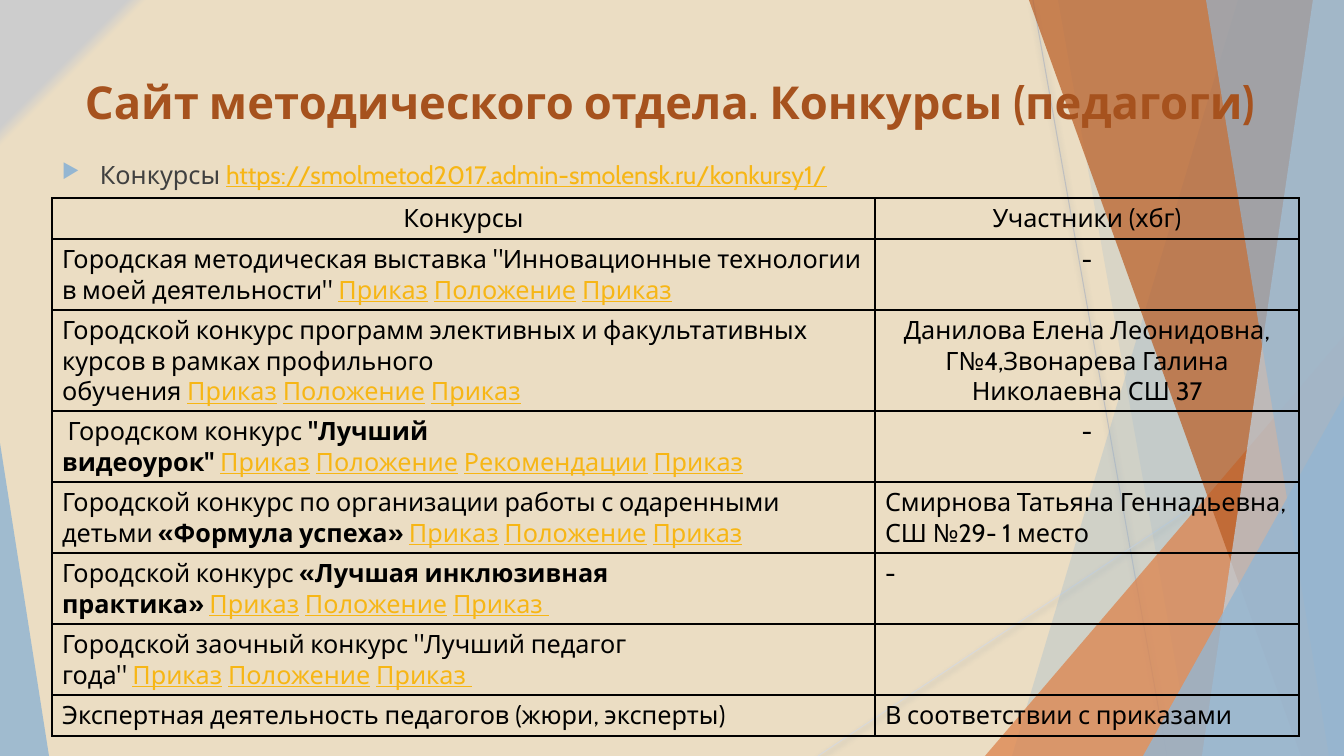
from lxml.etree import SubElement
from pptx import Presentation
from pptx.dml.color import RGBColor
from pptx.enum.shapes import MSO_CONNECTOR as Connector, MSO_SHAPE as Shape
from pptx.enum.text import MSO_ANCHOR as Anchor, PP_ALIGN as Align
from pptx.oxml.ns import qn
from pptx.util import Pt

SLIDE_WIDTH, SLIDE_HEIGHT = 1344, 756
EMU_PER_PX = 12192000 / SLIDE_WIDTH
FONT = "Cabin"
BLACK, LINK, BLUE, ORANGE = "000000", "F7B615", "94B6D2", "DD8047"
NBSP = chr(160)

# Slanted bands: top left, top right, bottom right, bottom left x; colour; opacity
BANDS_BELOW = [
    (1238, 1344, 1344, 1012, BLUE, 30),
    (1058, 1344, 1344, 1192, BLUE, 20),
]
BANDS_ABOVE = [
    (1029, 1344, 1344, 1301, "B95B22", 70),
    (1313, 1344, 1344, 1202, "BFD3E4", 70),
    (1206, 1344, 1344, 1329, BLUE, 65),
]

# Contests: lines of text, (text, bold) parts, links, participants, alignment
ORDER, RULES, ADVICE = "Приказ", "Положение", "Рекомендации"
LINKS = [ORDER, RULES, ORDER]
SPACED_LINKS = [ORDER, RULES, ORDER + NBSP]
CONTESTS = [
    (1, [("Конкурсы", False)], [], "Участники (хбг)", Align.CENTER),
    (2, [("Городская методическая выставка", False),
         ('"Инновационные технологии в моей деятельности"', False)],
     LINKS, "-", Align.CENTER),
    (3, [("Городской конкурс программ элективных и факультативных курсов "
          "в рамках профильного обучения", False)], LINKS,
     "Данилова Елена Леонидовна, Г№4,Звонарева Галина Николаевна СШ 37",
     Align.CENTER),
    (2, [("", False), ("Городском конкурс", False), ('"Лучший видеоурок"', True)],
     [ORDER, RULES, ADVICE, ORDER], "-", Align.CENTER),
    (2, [("Городской конкурс по организации работы с одаренными детьми", False),
         ("«Формула успеха»", True)], LINKS,
     "Смирнова Татьяна Геннадьевна, СШ №29- 1 место", Align.LEFT),
    (2, [("Городской конкурс", False), ("«Лучшая инклюзивная практика»", True)],
     SPACED_LINKS, "-", Align.LEFT),
    (2, [('Городской заочный конкурс "Лучший педагог года"', False)],
     SPACED_LINKS, "", Align.LEFT),
    (1, [("Экспертная деятельность педагогов (жюри, эксперты)", False)], [],
     "В соответствии с приказами", Align.LEFT),
]


def px(*lengths):
    return [round(length * EMU_PER_PX) for length in lengths]


def color(hex_string):
    return RGBColor.from_string(hex_string)


def add_element(parent, tag, **attributes):
    return SubElement(parent, qn(tag), attributes)


def set_background(slide):
    fill = slide.background.fill
    fill.gradient()
    for stop, position, shade in zip(fill.gradient_stops, (0.93, 0.94), ("EBDDC3", "CDCDCD")):
        stop.position = position
        stop.color.rgb = color(shade)
    gradient = slide.background._cSld.find(".//" + qn("a:gradFill"))
    gradient.remove(gradient.find(qn("a:lin")))
    circle = add_element(gradient, "a:path", path="circle")
    add_element(circle, "a:fillToRect", l="100000", t="100000")


def paint(shape, shade, opacity):
    shape.shadow.inherit = False
    shape.fill.solid()
    shape.fill.fore_color.rgb = color(shade)
    shape.line.fill.background()
    solid = shape._element.spPr.find(qn("a:solidFill"))
    add_element(solid[0], "a:alpha", val=str(opacity * 1000))


def add_band(slide, top_left, top_right, bottom_right, bottom_left, shade, opacity):
    builder = slide.shapes.build_freeform(top_left, 0, scale=EMU_PER_PX)
    builder.add_line_segments([(top_right, 0), (bottom_right, SLIDE_HEIGHT),
                               (bottom_left, SLIDE_HEIGHT)])
    paint(builder.convert_to_shape(), shade, opacity)


def add_triangle(slide, box, apex, shade, opacity):
    shape = slide.shapes.add_shape(Shape.ISOSCELES_TRIANGLE, *px(*box))
    shape.adjustments[0] = apex
    paint(shape, shade, opacity)


def add_line(slide, ends, shade):
    line = slide.shapes.add_connector(Connector.STRAIGHT, *px(*ends))
    line.line.color.rgb = color(shade)
    line.line.width = Pt(0.75)
    effects = add_element(line._element.spPr, "a:effectLst")
    shadow = add_element(effects, "a:outerShdw", blurRad=str(Pt(4)), dist=str(Pt(2)),
                         dir="5400000", rotWithShape="0")
    shadow_color = add_element(shadow, "a:srgbClr", val="4F6D86")
    add_element(shadow_color, "a:alpha", val="38000")


def add_run(paragraph, text, shade=BLACK, size=18, bold=False, underline=False):
    run = paragraph.add_run()
    run.text = text
    font = run.font
    font.name, font.size = FONT, Pt(size)
    font.bold, font.underline = bold, underline
    font.color.rgb = color(shade)


def add_text_box(slide, box, anchor):
    frame = slide.shapes.add_textbox(*px(*box)).text_frame
    frame.word_wrap = True
    frame.vertical_anchor = anchor
    return frame.paragraphs[0]


def add_bullet(paragraph):
    properties = paragraph._p.get_or_add_pPr()
    indent = px(38)[0]
    properties.set("marL", str(indent))
    properties.set("indent", str(-indent))
    add_element(add_element(properties, "a:buClr"), "a:srgbClr", val=BLUE)
    add_element(properties, "a:buSzPct", val="80000")
    add_element(properties, "a:buChar", char="▶")


def style_cell(cell):
    cell.fill.background()
    properties = cell._tc.get_or_add_tcPr()
    for index, side in enumerate(("a:lnL", "a:lnR", "a:lnT", "a:lnB")):
        border = add_element(properties, side, w=str(Pt(1)))
        add_element(add_element(border, "a:solidFill"), "a:srgbClr", val=BLACK)
        properties.insert(index, border)


def fill_contest(paragraph, parts, links):
    gap = NBSP if links else ""
    for text, bold in parts:
        add_run(paragraph, text + gap, bold=bold)
    for index, link in enumerate(links):
        if index:
            add_run(paragraph, NBSP)
        add_run(paragraph, link, LINK, underline=True)


def add_contest_table(slide):
    heights = [11 + 30 * contest[0] for contest in CONTESTS]
    frame = slide.shapes.add_table(len(CONTESTS), 2, *px(52, 198, 1247, sum(heights)))
    table = frame.table
    table.first_row = table.horz_banding = False
    for column, width in zip(table.columns, px(823, 424)):
        column.width = width
    for row, height, contest in zip(table.rows, px(*heights), CONTESTS):
        row.height = height
        _, parts, links, participants, alignment = contest
        for cell in row.cells:
            style_cell(cell)
        name, people = [cell.text_frame.paragraphs[0] for cell in row.cells]
        fill_contest(name, parts, links)
        people.alignment = alignment
        if participants:
            add_run(people, participants)
    table.cell(0, 0).text_frame.paragraphs[0].alignment = Align.CENTER


def main():
    presentation = Presentation()
    presentation.slide_width, presentation.slide_height = px(SLIDE_WIDTH, SLIDE_HEIGHT)
    slide = presentation.slides.add_slide(presentation.slide_layouts[6])

    # Backdrop
    set_background(slide)
    add_line(slide, (1033, 0, 1167, 756), "BFBFBF")
    add_line(slide, (1344, 406, 818, 756), "D9D9D9")
    for band in BANDS_BELOW:
        add_band(slide, *band)
    add_triangle(slide, (985, 336, 359, 420), 1, ORANGE, 72)
    for band in BANDS_ABOVE:
        add_band(slide, *band)
    add_triangle(slide, (1143, 396, 201, 360), 1, BLUE, 80)
    add_triangle(slide, (0, 443, 49, 313), 0, BLUE, 85)

    # Title and site address
    title = add_text_box(slide, (75, 68, 1224, 66), Anchor.MIDDLE)
    add_run(title, "Сайт методического отдела. Конкурсы (педагоги)", "A6521E", 32.4, bold=True)
    address = add_text_box(slide, (52, 154, 948, 427), Anchor.TOP)
    add_bullet(address)
    add_run(address, "Конкурсы ", "404040")
    add_run(address, "https://smolmetod2017.admin-smolensk.ru/konkursy1/", LINK, underline=True)

    # Contests and participants
    add_contest_table(slide)
    presentation.save("out.pptx")


if __name__ == "__main__":
    main()
